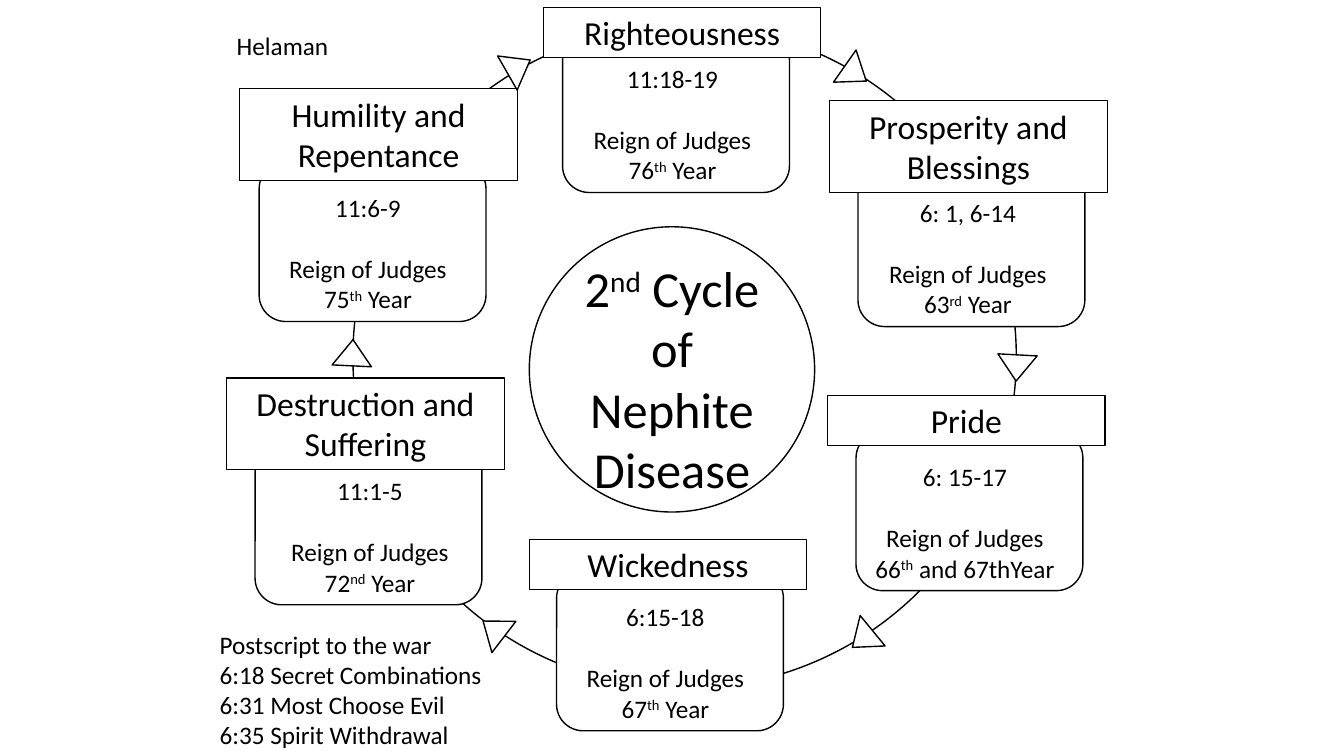
from dataclasses import dataclass

from pptx import Presentation
from pptx.dml.color import RGBColor
from pptx.enum import shapes, text
from pptx.util import Inches, Pt


@dataclass(frozen=True)
class Theme:
    font: str = "Calibri"
    ink: RGBColor = RGBColor(0, 0, 0)
    paper: RGBColor = RGBColor(255, 255, 255)
    title: int = 36
    heading: int = 24
    body: int = 18
    gap: int = 22
    outline: float = 1
    thin: float = 0.75


THEME = Theme()
SHAPE = shapes.MSO_SHAPE
CENTER = text.PP_ALIGN.CENTER
LEFT = text.PP_ALIGN.LEFT


def outlined(parent, kind, left, top, width, height, line=THEME.outline):
    box = parent.shapes.add_shape(
        kind, Inches(left), Inches(top), Inches(width), Inches(height))
    box.shadow.inherit = False
    box.fill.solid()
    box.fill.fore_color.rgb = THEME.paper
    box.line.color.rgb = THEME.ink
    box.line.width = Pt(line)
    return box


def write(box, lines, size=THEME.body, align=CENTER, gap_after_first=0):
    """Fill the box with one paragraph per line; ^marks^ enclose superscripts."""
    frame = box.text_frame
    frame.word_wrap = True
    frame.auto_size = text.MSO_AUTO_SIZE.SHAPE_TO_FIT_TEXT
    frame.vertical_anchor = text.MSO_ANCHOR.TOP
    for row, line in enumerate(lines):
        para = frame.add_paragraph() if row else frame.paragraphs[0]
        para.alignment = align
        if row == 1:
            para.space_before = Pt(gap_after_first)
        for part, words in enumerate(line.split("^")):
            span = para.add_run()
            span.text = words
            span.font.name = THEME.font
            span.font.size = Pt(size)
            span.font.color.rgb = THEME.ink
            if part % 2:
                span.font._element.set("baseline", "30000")


deck = Presentation()
deck.slide_width, deck.slide_height = Inches(13.33), Inches(7.5)
page = deck.slides.add_slide(deck.slide_layouts.get_by_name("Title Only"))

ring = outlined(page, SHAPE.OVAL, 3.5, 0.25, 6.58, 6.58)
ring.fill.background()

# Stage, heading (left, top, height), card (left, top), text left, verses, year
stages = [
    ("Righteousness", (5.39, 0.07, 0.5), (5.58, 0.33), 5.67,
     "11:18-19", "76^th^ Year"),
    ("Prosperity and Blessings", (8.23, 1, 0.91), (8.51, 1.66), 8.6,
     "6: 1, 6-14", "63^rd^ Year"),
    ("Pride", (8.21, 3.92, 0.5), (8.49, 4.28), 8.57,
     "6: 15-17", "66^th^ and 67thYear"),
    ("Wickedness", (5.25, 5.35, 0.5), (5.52, 5.67), 5.6,
     "6:15-18", "67^th^ Year"),
    ("Destruction and Suffering", (2.25, 3.75, 0.91), (2.53, 4.42), 2.67,
     "11:1-5", "72^nd^ Year"),
    ("Humility and Repentance", (2.38, 0.88, 0.91), (2.57, 1.61), 2.65,
     "11:6-9", "75^th^ Year"),
]
for stage, (left, top, height), (card_left, card_top), text_left, verses, year in stages:
    group = page.shapes.add_group_shape()
    outlined(group, SHAPE.ROUNDED_RECTANGLE, card_left, card_top, 2.25, 1.58)
    details = group.shapes.add_textbox(
        Inches(text_left), Inches(card_top + 0.25), Inches(2), Inches(1.31))
    write(details, [verses, "Reign of Judges", year], gap_after_first=THEME.gap)
    heading = outlined(group, SHAPE.RECTANGLE, left, top, 2.75, height, THEME.thin)
    write(heading, [stage], THEME.heading)

hub = outlined(page, SHAPE.OVAL, 5.25, 2.25, 2.83, 2.83)
title = page.shapes.title
title.left, title.top = Inches(5.58), Inches(2.5)
title.width, title.height = Inches(2.17), Inches(2.52)
write(title, ["2^nd^ Cycle of Nephite Disease"], THEME.title)
hub.element.addnext(title.element)  # bring the title in front of the hub

arrows = [(8.29, 0.6, 125), (9.89, 3.52, 183.1), (8.36, 6.21, 230.6),
          (4.95, 0.53, 60.3), (3.3, 3.37, 2.7), (4.7, 6.11, 307.5)]
for left, top, angle in arrows:
    arrow = outlined(page, SHAPE.ISOSCELES_TRIANGLE, left, top, 0.39, 0.26)
    arrow.rotation = angle

notes = [
    (2.25, 0.25, 1.67, 0.4, ["Helaman"]),
    (2.08, 6.19, 3.58, 1.31, ["Postscript to the war", "6:18 Secret Combinations",
                              "6:31 Most Choose Evil", "6:35 Spirit Withdrawal"]),
]
for left, top, width, height, lines in notes:
    note = page.shapes.add_textbox(
        Inches(left), Inches(top), Inches(width), Inches(height))
    write(note, lines, align=LEFT)

deck.save("out.pptx")
